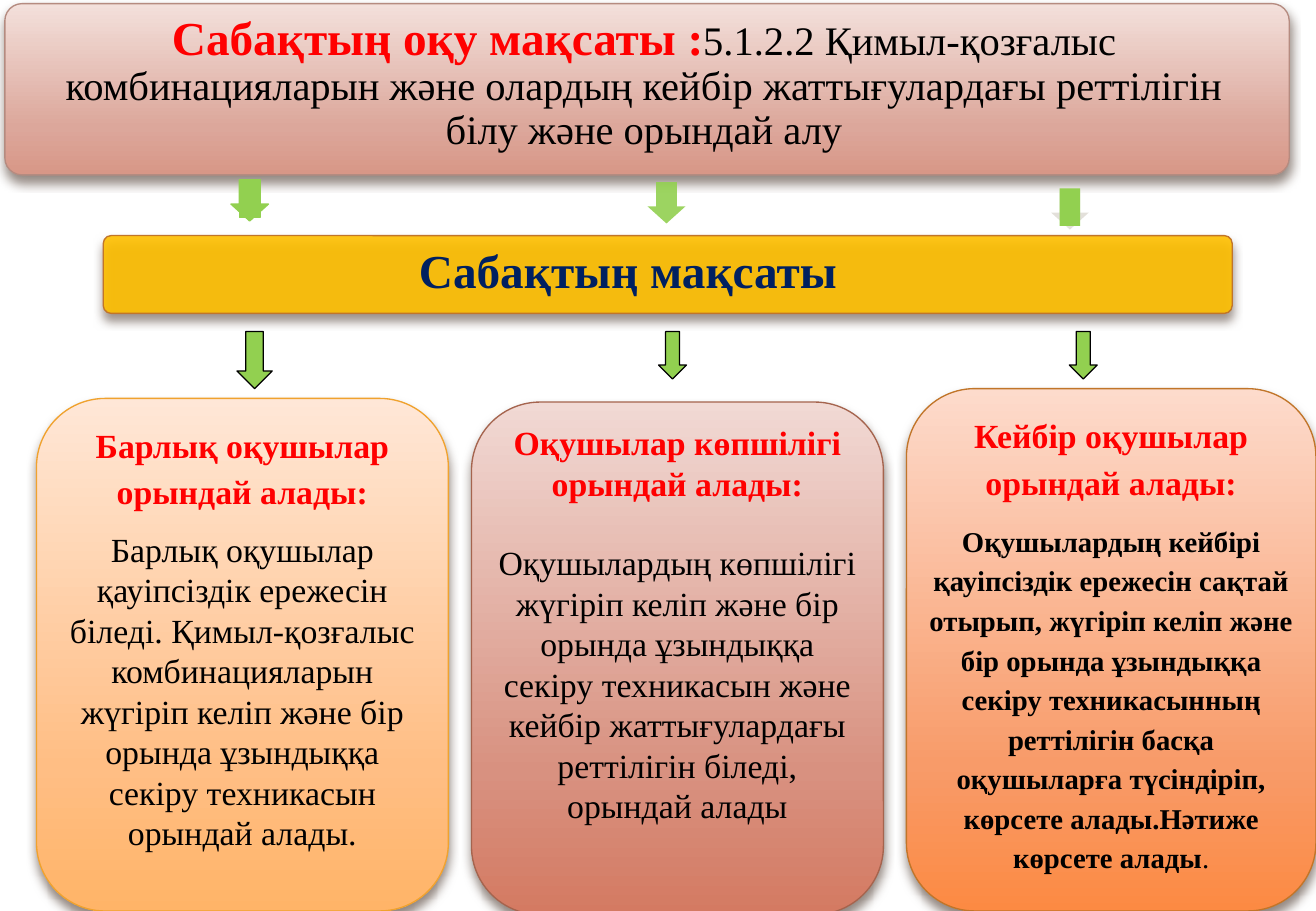
from dataclasses import dataclass
from typing import NamedTuple, Optional

from lxml import etree
from pptx import Presentation
from pptx.dml.color import RGBColor
from pptx.enum.shapes import MSO_SHAPE as Shape
from pptx.enum.text import MSO_ANCHOR as Anchor, PP_ALIGN as Align
from pptx.oxml.ns import qn
from pptx.util import Inches, Pt

RED = RGBColor(0xFF, 0x00, 0x00)
BLACK = RGBColor(0x00, 0x00, 0x00)
NAVY = RGBColor(0x00, 0x20, 0x60)
GREEN = RGBColor(0x92, 0xD0, 0x50)
PALE_GREY = RGBColor(0xE0, 0xDD, 0xD6)
GOLD = RGBColor(0xFF, 0xC0, 0x00)
OCHRE = RGBColor(0xC1, 0x75, 0x29)
AMBER = RGBColor(0xF0, 0xA2, 0x2E)
BROWN = RGBColor(0xA5, 0x64, 0x4E)
DUSTY_ROSE = RGBColor(0xB5, 0x8B, 0x80)
SHADOW = RGBColor(0x4E, 0x3B, 0x30)
ROSE_FADE = (RGBColor(0xF3, 0xE0, 0xDB), RGBColor(0xDC, 0xA7, 0x9B), RGBColor(0xD8, 0x97, 0x87))
PEACH_FADE = (RGBColor(0xFF, 0xE7, 0xD7), RGBColor(0xFF, 0xBE, 0x84), RGBColor(0xFF, 0xB4, 0x68))
BRICK_FADE = (RGBColor(0xF1, 0xD9, 0xD4), RGBColor(0xD8, 0x91, 0x80), RGBColor(0xD4, 0x7A, 0x62))
ORANGE_FADE = (RGBColor(0xFD, 0xDB, 0xCC), RGBColor(0xF8, 0x9B, 0x69), RGBColor(0xFC, 0x8A, 0x43))

FONT = "Times New Roman"
FADE_STOPS = (0, 72, 100)


class Box(NamedTuple):
    left: float
    top: float
    width: float
    height: float


class Run(NamedTuple):
    text: str
    size: float
    color: RGBColor = BLACK
    bold: bool = False


@dataclass
class Para:
    runs: list[Run]
    spacing: float = 1.0
    after: float = 0


@dataclass
class Piece:
    box: Box
    kind: Shape
    fill: RGBColor
    line: Optional[RGBColor] = None
    opacity: int = 100
    adjust: tuple[float, ...] = ()


@dataclass
class Card:
    box: Box
    fade: tuple[RGBColor, ...]
    line: RGBColor
    paras: list[Para]


def add_color(parent, color: RGBColor, opacity: int = 100) -> None:
    node = etree.SubElement(parent, qn("a:srgbClr"), val=str(color))
    if opacity < 100:
        etree.SubElement(node, qn("a:alpha"), val=str(opacity * 1000))


def apply_fade(shape, fade: tuple[RGBColor, ...]) -> None:
    shape.fill.gradient()
    gradient = shape._element.spPr.find(qn("a:gradFill"))
    for child in list(gradient):
        gradient.remove(child)
    stops = etree.SubElement(gradient, qn("a:gsLst"))
    for position, color in zip(FADE_STOPS, fade):
        add_color(etree.SubElement(stops, qn("a:gs"), pos=str(position * 1000)), color)
    etree.SubElement(gradient, qn("a:lin"), ang="5400000", scaled="0")


def add_shadow(shape) -> None:
    effects = shape._element.spPr.find(qn("a:effectLst"))
    shadow = etree.SubElement(effects, qn("a:outerShdw"), blurRad=str(Pt(6)),
                              dist=str(Pt(4)), dir="5400000", rotWithShape="0")
    add_color(shadow, SHADOW, 60)


def add_piece(slide, piece: Piece, line_width: float = 0.75):
    shape = slide.shapes.add_shape(piece.kind, *map(Inches, piece.box))
    shape.shadow.inherit = False
    for index, value in enumerate(piece.adjust):
        shape.adjustments[index] = value
    shape.fill.solid()
    shape.fill.fore_color.rgb = piece.fill
    if piece.opacity < 100:
        color = shape._element.spPr.find(qn("a:solidFill"))[0]
        etree.SubElement(color, qn("a:alpha"), val=str(piece.opacity * 1000))
    if piece.line is None:
        shape.line.fill.background()
    else:
        shape.line.color.rgb = piece.line
        shape.line.width = Pt(line_width)
    return shape


def add_panel(slide, piece: Piece, fade: tuple[RGBColor, ...] = ()):
    panel = add_piece(slide, piece, 0.79)
    if fade:
        apply_fade(panel, fade)
    add_shadow(panel)
    return panel


def write(frame, paras: list[Para], anchor: Anchor = Anchor.TOP,
          inset_x: float = 0, inset_y: float = 0) -> None:
    frame.word_wrap = True
    frame.vertical_anchor = anchor
    frame.margin_left = frame.margin_right = Inches(inset_x)
    frame.margin_top = frame.margin_bottom = Inches(inset_y)
    for index, para in enumerate(paras):
        target = frame.add_paragraph() if index else frame.paragraphs[0]
        target.alignment = Align.CENTER
        target.line_spacing = para.spacing
        target.space_after = Pt(para.after)
        for part in para.runs:
            run = target.add_run()
            run.text = part.text
            run.font.name = FONT
            run.font.size = Pt(part.size)
            run.font.bold = part.bold
            run.font.color.rgb = part.color


def add_text(slide, box: Box, paras: list[Para], **layout) -> None:
    write(slide.shapes.add_textbox(*map(Inches, box)).text_frame, paras, **layout)


OBJECTIVE = [Para([
    Run("Сабақтың оқу мақсаты :", 28, RED, True),
    Run("5.1.2.2 Қимыл-қозғалыс комбинацияларын және олардың кейбір "
        "жаттығулардағы реттілігін білу және орындай алу", 24)], 0.9)]

CARDS = [
    Card(Box(0.3, 3.28, 3.39, 4.22), PEACH_FADE, AMBER, [
        Para([Run("Барлық оқушылар орындай алады:", 20, RED, True)], 1.15, 10),
        Para([Run("Барлық оқушылар қауіпсіздік ережесін біледі. Қимыл-қозғалыс "
                  "комбинацияларын жүгіріп келіп және бір орында ұзындыққа секіру "
                  "техникасын орындай алады.", 20)])]),
    Card(Box(3.88, 3.31, 3.39, 4.22), BRICK_FADE, BROWN, [
        Para([Run("Оқушылар көпшілігі орындай алады:", 20, RED, True)], after=23),
        Para([Run("Оқушылардың көпшілігі жүгіріп келіп және бір орында ұзындыққа "
                  "секіру техникасын және кейбір жаттығулардағы реттілігін біледі, "
                  "орындай алады", 20)])]),
    Card(Box(7.46, 3.2, 3.37, 4.3), ORANGE_FADE, OCHRE, [
        Para([Run("Кейбір оқушылар орындай алады:", 20, RED, True)], 1.15, 10),
        Para([Run("Оқушылардың кейбірі қауіпсіздік ережесін сақтай отырып, жүгіріп "
                  "келіп және бір орында ұзындыққа секіру техникасынның реттілігін "
                  "басқа оқушыларға түсіндіріп, көрсете алады.Нәтиже көрсете алады",
                  17, bold=True),
              Run(".", 17)], 1.15, 10)]),
]

WIDE_HEAD = (0.55, 0.45)
ARROWS = [
    # From the objective to the aim
    Piece(Box(8.65, 1.55, 0.31, 0.34), Shape.DOWN_ARROW, PALE_GREY, None, 90, WIDE_HEAD),
    Piece(Box(8.72, 1.55, 0.17, 0.31), Shape.RECTANGLE, GREEN),
    Piece(Box(5.33, 1.5, 0.31, 0.34), Shape.DOWN_ARROW, GREEN, None, 90, WIDE_HEAD),
    Piece(Box(1.9, 1.48, 0.31, 0.34), Shape.DOWN_ARROW, GREEN, GREEN, 100, WIDE_HEAD),
    Piece(Box(1.97, 1.48, 0.17, 0.31), Shape.RECTANGLE, GREEN, GREEN),
    # From the aim to the cards
    Piece(Box(1.95, 2.73, 0.29, 0.47), Shape.DOWN_ARROW, GREEN, BLACK),
    Piece(Box(5.42, 2.73, 0.23, 0.39), Shape.DOWN_ARROW, GREEN, BLACK),
    Piece(Box(8.8, 2.73, 0.23, 0.39), Shape.DOWN_ARROW, GREEN, BLACK),
]


def main() -> None:
    deck = Presentation()
    deck.slide_width, deck.slide_height = Inches(10.83), Inches(7.5)
    slide = deck.slides.add_slide(deck.slide_layouts[6])

    # Learning objective
    add_panel(slide, Piece(Box(0.04, 0.03, 10.57, 1.41), Shape.ROUNDED_RECTANGLE,
                           ROSE_FADE[0], DUSTY_ROSE, adjust=(0.1,)), ROSE_FADE)
    add_text(slide, Box(0.14, 0.03, 10.32, 1.32), OBJECTIVE,
             anchor=Anchor.MIDDLE, inset_x=0.15)

    # Cards for the three groups of pupils
    for card in CARDS:
        panel = add_panel(slide, Piece(card.box, Shape.ROUNDED_RECTANGLE,
                                       card.fade[0], card.line), card.fade)
        write(panel.text_frame, card.paras)

    # Lesson aim and arrows
    add_panel(slide, Piece(Box(0.85, 1.94, 9.29, 0.64), Shape.ROUNDED_RECTANGLE,
                           GOLD, OCHRE, 90, (0.1,)))
    for arrow in ARROWS:
        add_piece(slide, arrow)
    add_text(slide, Box(0.3, 1.94, 9.83, 0.57),
             [Para([Run("Сабақтың мақсаты ", 28, NAVY, True)])], inset_x=0.1, inset_y=0.05)

    deck.save("out.pptx")


if __name__ == "__main__":
    main()
